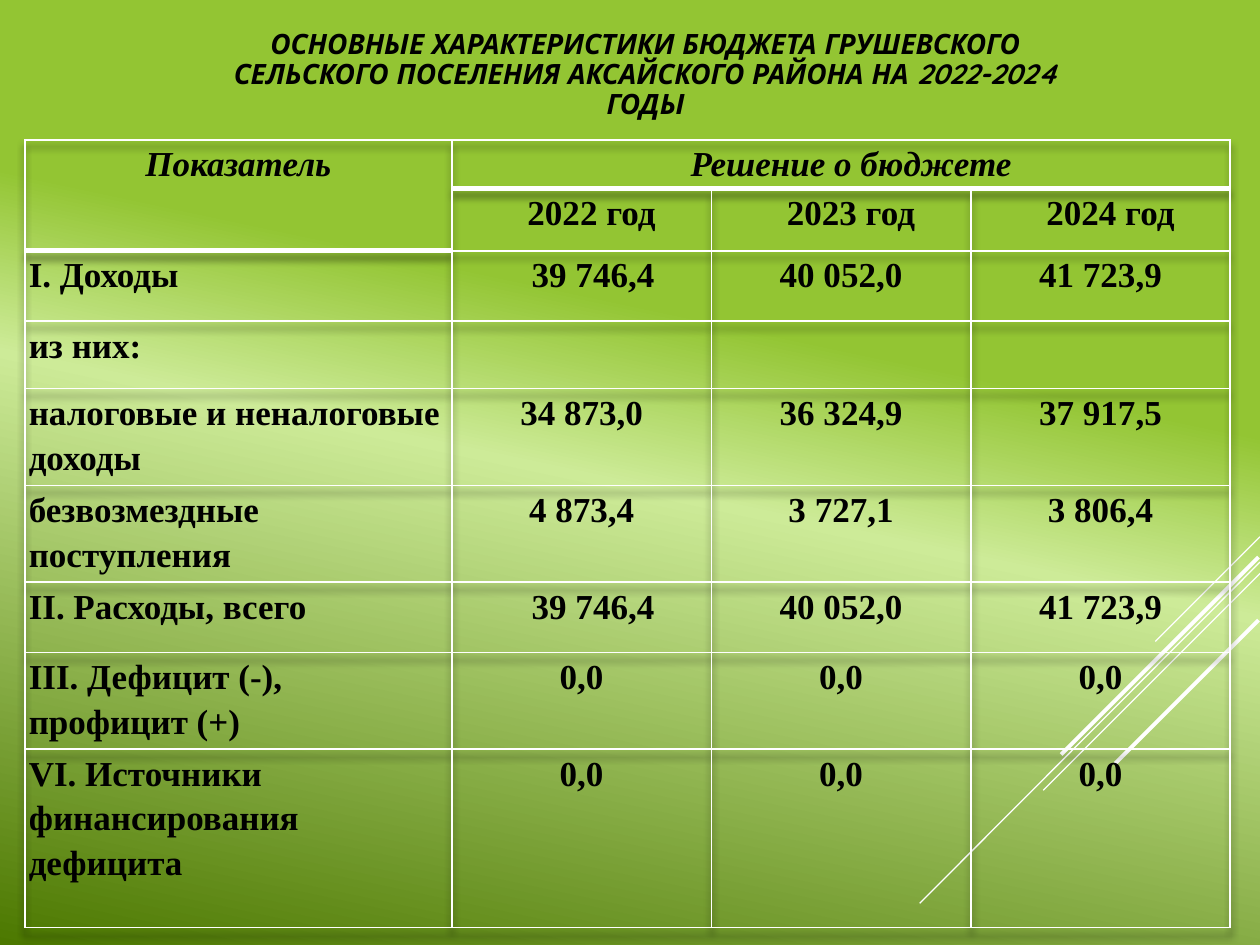
from dataclasses import dataclass

import lxml.etree
import pptx
import pptx.dml.color
import pptx.enum.shapes
import pptx.enum.text
import pptx.oxml
import pptx.oxml.ns
import pptx.util
from pptx.util import Cm, Pt

WHITE = "FFFFFF"
BLACK = "000000"
DRAWING_NS = pptx.oxml.ns.nsdecls("a")
CENTER = pptx.enum.text.PP_ALIGN.CENTER
LEFT = pptx.enum.text.PP_ALIGN.LEFT


@dataclass
class Stripe:
    """A diagonal stripe: ends in cm and width in points."""
    start: tuple[float, float]
    end: tuple[float, float]
    width: float


@dataclass
class BudgetRow:
    label: str
    values: tuple[str, str, str]
    height: float
    first_indent: float = 0


STRIPES = [
    Stripe((25.4, 10.82), (23.29, 12.93), 0.75),
    Stripe((25.4, 11.33), (18.54, 18.21), 0.75),
    Stripe((25.4, 11.56), (21.03, 15.93), 0.75),
    Stripe((25.37, 11.23), (21.39, 15.21), 2.25),
    Stripe((25.37, 12.5), (22.48, 15.39), 2.25),
]

TITLE = ("ОСНОВНЫЕ ХАРАКТЕРИСТИКИ БЮДЖЕТА ГРУШЕВСКОГО СЕЛЬСКОГО "
         "ПОСЕЛЕНИЯ АКСАЙСКОГО РАЙОНА НА 2022-2024 ГОДЫ")
YEARS = ("2022 год", "2023 год", "2024 год")
TOTALS = ("39 746,4", "40 052,0", "41 723,9")
ZEROS = ("0,0", "0,0", "0,0")
BUDGET_ROWS = [
    BudgetRow("I. Доходы", TOTALS, 1.42, 0.46),
    BudgetRow("из них:", ("", "", ""), 1.36),
    BudgetRow("налоговые и неналоговые доходы",
              ("34 873,0", "36 324,9", "37 917,5"), 1.88),
    BudgetRow("безвозмездные поступления",
              ("4 873,4", "3 727,1", "3 806,4"), 1.8),
    BudgetRow("II. Расходы, всего", TOTALS, 1.42, 0.46),
    BudgetRow("III. Дефицит (-), профицит (+)", ZEROS, 1.88),
    BudgetRow("VI. Источники финансирования\nдефицита", ZEROS, 3.6),
]
HEADER_HEIGHTS = [0.95, 1.26]
HEADER_INDENT = 0.4
COLUMN_WIDTHS = [8.61, 5.23, 5.23, 5.23]


def color(value: str) -> pptx.dml.color.RGBColor:
    return pptx.dml.color.RGBColor.from_string(value)


def set_background(slide) -> None:
    stops = "".join(
        f'<a:gs pos="{position * 1000}"><a:srgbClr val="{value}"/></a:gs>'
        for position, value in [(36, "93C533"), (51, "CDEB98"), (100, "4C7800")])
    slide.background.fill.gradient()
    gradient = next(slide.element.iter(pptx.oxml.ns.qn("a:gradFill")))
    gradient.getparent().replace(gradient, pptx.oxml.parse_xml(
        f'<a:gradFill {DRAWING_NS} rotWithShape="1"><a:gsLst>{stops}</a:gsLst>'
        f'<a:lin ang="{102 * 60000}" scaled="0"/></a:gradFill>'))


def add_stripe(slide, stripe: Stripe) -> None:
    connector = slide.shapes.add_connector(
        pptx.enum.shapes.MSO_CONNECTOR.STRAIGHT,
        *map(Cm, stripe.start + stripe.end))
    connector.line.color.rgb = color(WHITE)
    connector.line.width = Pt(stripe.width)
    lxml.etree.SubElement(connector.element.spPr,
                          pptx.oxml.ns.qn("a:effectLst"))


def format_text(text_frame, font_name: str, size: float, italic: bool,
                alignment, spacing: float) -> None:
    for paragraph in text_frame.paragraphs:
        paragraph.alignment = alignment
        paragraph.line_spacing = spacing
        for run in paragraph.runs:
            run.font.name = font_name
            run.font.size = Pt(size)
            run.font.bold = True
            run.font.italic = italic
            run.font.color.rgb = color(BLACK)


def add_title(slide) -> None:
    shape = slide.shapes.add_textbox(Cm(3.91), Cm(0.33), Cm(18.21), Cm(2.39))
    text_frame = shape.text_frame
    text_frame.word_wrap = True
    text_frame.vertical_anchor = pptx.enum.text.MSO_ANCHOR.MIDDLE
    text_frame.text = TITLE
    format_text(text_frame, "Quicksand", 16, True, CENTER, 0.9)


def fill_cell(cell, text: str, alignment=CENTER, italic: bool = False,
              indent: float = 0) -> None:
    cell.text_frame.text = text
    format_text(cell.text_frame, "Times New Roman", 20, italic, alignment, 1.15)
    for paragraph in cell.text_frame.paragraphs:
        properties = paragraph._p.get_or_add_pPr()
        properties.set("marL", str(Cm(indent)))
        properties.set("indent", "0")


def style_cell(cell, top: float, bottom: float) -> None:
    """Clear the fill, set the insets and draw white borders (in points)."""
    cell.margin_left = cell.margin_right = Cm(0.08)
    cell.margin_top = cell.margin_bottom = 0
    cell.fill.background()
    widths = {"lnL": 1, "lnR": 1, "lnT": top, "lnB": bottom}
    for index, (tag, width) in enumerate(widths.items()):
        cell._tc.get_or_add_tcPr().insert(index, pptx.oxml.parse_xml(
            f'<a:{tag} {DRAWING_NS} w="{Pt(width)}"><a:solidFill>'
            f'<a:srgbClr val="{WHITE}"/></a:solidFill></a:{tag}>'))


def add_table_shadow(table) -> None:
    table._tbl.tblPr.insert(0, pptx.oxml.parse_xml(
        f'<a:effectLst {DRAWING_NS}><a:outerShdw blurRad="{Cm(0.14)}" '
        f'dist="{Cm(0.14)}" dir="5400000" rotWithShape="0"><a:srgbClr '
        f'val="{BLACK}"><a:alpha val="50000"/></a:srgbClr></a:outerShdw>'
        '</a:effectLst>'))


def add_budget_table(slide) -> None:
    heights = HEADER_HEIGHTS + [row.height for row in BUDGET_ROWS]
    table = slide.shapes.add_table(
        len(heights), len(COLUMN_WIDTHS), Cm(0.5), Cm(2.82),
        Cm(sum(COLUMN_WIDTHS)), Cm(sum(heights))).table
    table.first_row = table.horz_banding = False
    add_table_shadow(table)
    for column, width in zip(table.columns, COLUMN_WIDTHS):
        column.width = Cm(width)
    for row, height in zip(table.rows, heights):
        row.height = Cm(height)

    table.cell(0, 0).merge(table.cell(1, 0))
    table.cell(0, 1).merge(table.cell(0, 3))
    for row_index in range(len(heights)):
        for column_index in range(len(COLUMN_WIDTHS)):
            header_end = 2 if column_index == 0 else 1
            style_cell(table.cell(row_index, column_index),
                       top=3 if row_index == header_end else 1,
                       bottom=3 if row_index < header_end else 1)

    fill_cell(table.cell(0, 0), "Показатель", italic=True)
    fill_cell(table.cell(0, 1), "Решение о бюджете", italic=True,
              indent=HEADER_INDENT)
    for column_index, year in enumerate(YEARS, 1):
        fill_cell(table.cell(1, column_index), year, indent=HEADER_INDENT)
    for row_index, row in enumerate(BUDGET_ROWS, len(HEADER_HEIGHTS)):
        fill_cell(table.cell(row_index, 0), row.label, LEFT)
        for column_index, value in enumerate(row.values, 1):
            fill_cell(table.cell(row_index, column_index), value,
                      indent=row.first_indent if column_index == 1 else 0)


def main() -> None:
    presentation = pptx.Presentation()
    presentation.slide_width = Cm(25.4)
    presentation.slide_height = Cm(19.05)
    slide = presentation.slides.add_slide(presentation.slide_layouts[6])
    set_background(slide)
    for stripe in STRIPES:
        add_stripe(slide, stripe)
    add_title(slide)
    add_budget_table(slide)
    presentation.save("out.pptx")


if __name__ == "__main__":
    main()
